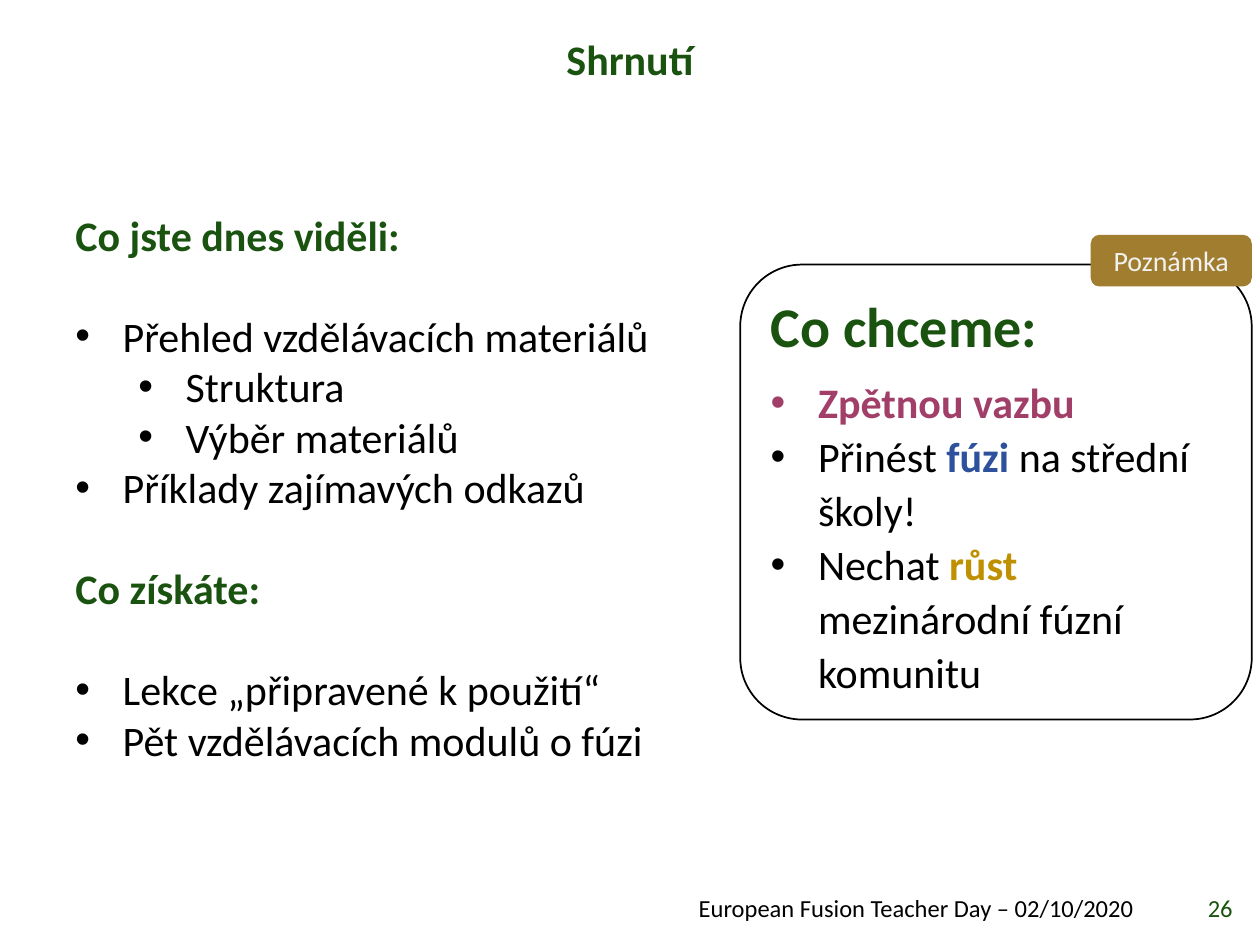
from lxml import etree
from pptx import Presentation
from pptx.dml.color import RGBColor
from pptx.enum.shapes import MSO_SHAPE
from pptx.enum.text import MSO_ANCHOR, PP_ALIGN
from pptx.oxml.ns import qn
from pptx.util import Pt

ROUND = MSO_SHAPE.ROUNDED_RECTANGLE
MIDDLE, TOP = MSO_ANCHOR.MIDDLE, MSO_ANCHOR.TOP
LEFT, CENTER, RIGHT = PP_ALIGN.LEFT, PP_ALIGN.CENTER, PP_ALIGN.RIGHT
GREEN, BLACK, WHITE = "1A520F", "000000", "FFFFFF"
ROSE, BLUE, GOLD = "A13F69", "2D519C", "BF9000"
HANG, STEP, LINE = 27, 36, 29


def color(code):
    """Turn a hex string into a colour."""
    return RGBColor.from_string(code)


def bullet(para, level=0):
    """Give a paragraph a hanging bullet."""
    para.level = level
    props = para._p.get_or_add_pPr()
    props.set("marL", str(Pt(HANG + STEP * level)))
    props.set("indent", str(-Pt(HANG)))
    etree.SubElement(props, qn("a:buFont")).set("typeface", "Arial")
    etree.SubElement(props, qn("a:buChar")).set("char", "•")


def write(para, parts, size):
    """Add runs given as text, colour and weight."""
    for text, code, bold in parts:
        run = para.add_run()
        run.text = text
        font = run.font
        font.name, font.size, font.bold = "Calibri", Pt(size), bold
        font.color.rgb = color(code)


def label(slide, box, text, size, code, align, bold=False):
    """Place one line of text in a box."""
    frame = slide.shapes.add_textbox(*map(Pt, box)).text_frame
    frame.word_wrap = True
    frame.vertical_anchor = MIDDLE
    para = frame.paragraphs[0]
    para.alignment = align
    write(para, [(text, code, bold)], size)
    return para


def card(slide, box, fill, line=None):
    """Draw a rounded box and return it."""
    shape = slide.shapes.add_shape(ROUND, *map(Pt, box))
    shape.shadow.inherit = False
    shape.fill.solid()
    shape.fill.fore_color.rgb = color(fill)
    if line:
        shape.line.color.rgb = color(line)
        shape.line.width = Pt(1)
    else:
        shape.line.fill.background()
    shape.text_frame.vertical_anchor = MIDDLE
    shape.text_frame.word_wrap = True
    return shape


def recap(slide, box, parts):
    """List headed groups of bullets, one line apart."""
    frame = slide.shapes.add_textbox(*map(Pt, box)).text_frame
    frame.word_wrap = True
    frame.vertical_anchor = TOP
    para = frame.paragraphs[0]
    for order, (head, items) in enumerate(parts):
        if order:
            para = frame.add_paragraph()
            para.space_before = Pt(LINE)
        para.space_after = Pt(LINE)
        write(para, [(head, GREEN, True)], 24)
        for text, level in items:
            para = frame.add_paragraph()
            bullet(para, level)
            write(para, [(text, BLACK, False)], 24)


def note(slide, box, tag, head, items):
    """Draw the framed wish list with its tag at the top right."""
    left, top, width, height = box
    shape = card(slide, box, WHITE, BLACK)
    shape.adjustments[0] = 0.136
    frame = shape.text_frame
    para = frame.paragraphs[0]
    para.space_after = Pt(8)
    write(para, [(head, GREEN, True)], 32)
    for parts in items:
        para = frame.add_paragraph()
        bullet(para)
        write(para, parts, 24)
    for para in frame.paragraphs:
        para.alignment = LEFT
        para.line_spacing = 1.07
    wide, high = 92, 29.5
    flag = card(slide, (left + width - wide, top - 17, wide, high), "A17E2F")
    para = flag.text_frame.paragraphs[0]
    para.alignment = CENTER
    write(para, [(tag, "F2F2F2", False)], 16)


def main():
    """Build the summary slide."""
    deck = Presentation()
    deck.slide_width, deck.slide_height = Pt(720), Pt(540)
    slide = deck.slides.add_slide(deck.slide_layouts[6])
    title = label(slide, (0, 18.7, 720, 33.8), "Shrnutí", 24, GREEN, CENTER, True)
    title.line_spacing = 0.9
    recap(slide, (36, 116, 368.6, 327), [
        ("Co jste dnes viděli:", [
            ("Přehled vzdělávacích materiálů", 0),
            ("Struktura", 1),
            ("Výběr materiálů", 1),
            ("Příklady zajímavých odkazů", 0)]),
        ("Co získáte:", [
            ("Lekce „připravené k použití“", 0),
            ("Pět vzdělávacích modulů o fúzi", 0)]),
    ])
    note(slide, (423, 151.2, 292.3, 260), "Poznámka", "Co chceme:", [
        [("Zpětnou vazbu", ROSE, True)],
        [("Přinést ", BLACK, False), ("fúzi ", BLUE, True),
         ("na střední školy!", BLACK, False)],
        [("Nechat ", BLACK, False), ("růst ", GOLD, True),
         ("mezinárodní fúzní komunitu", BLACK, False)],
    ])
    label(slide, (105, 506.2, 550, 24.5),
          "European Fusion Teacher Day – 02/10/2020", 14, BLACK, RIGHT)
    label(slide, (664, 506.2, 47.5, 24.5), "26", 14, GREEN, RIGHT)
    deck.save("out.pptx")


if __name__ == "__main__":
    main()
